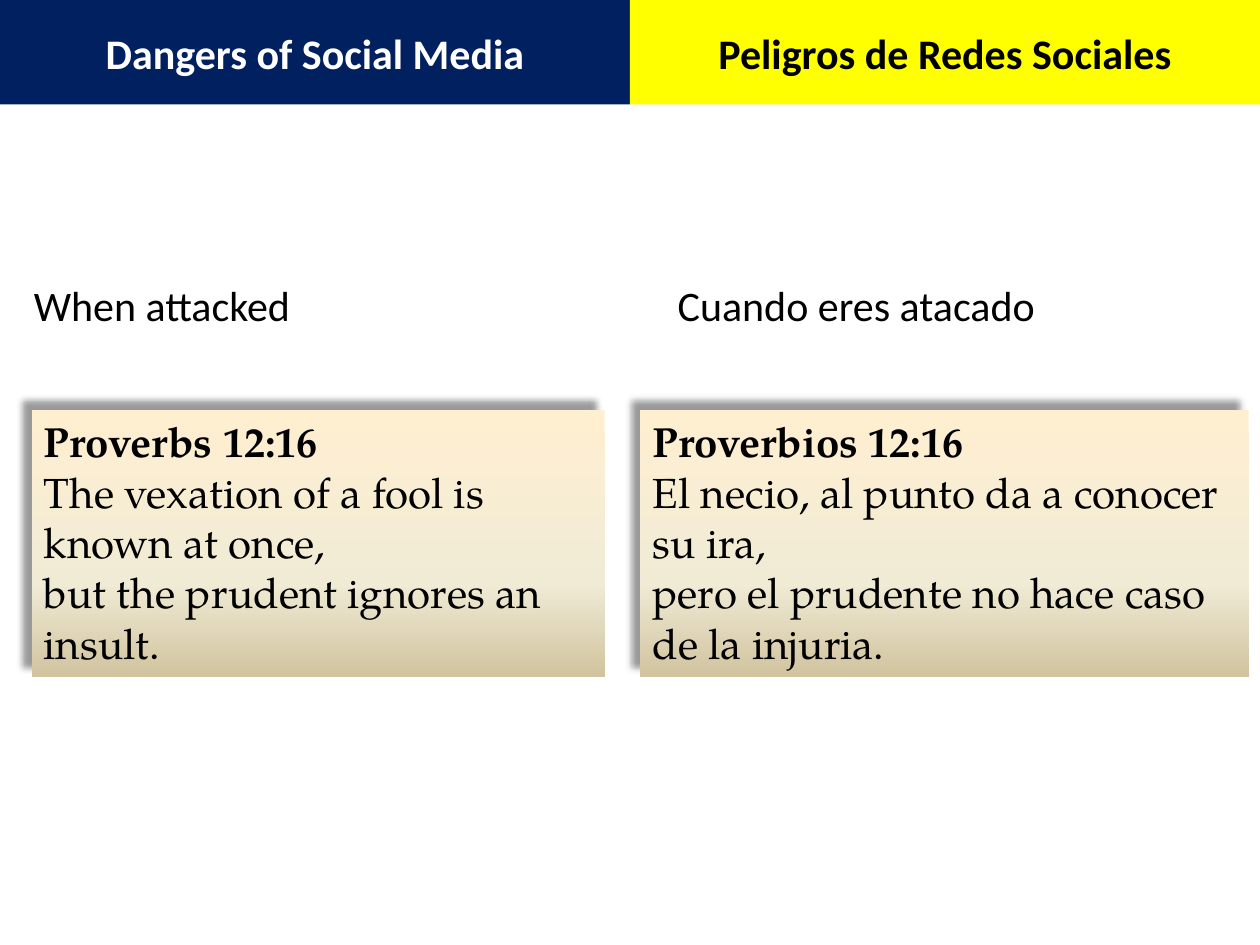
from copy import deepcopy
from dataclasses import dataclass

from lxml import etree
from pptx import Presentation
from pptx.dml.color import RGBColor
from pptx.enum import shapes, text
from pptx.oxml import ns
from pptx.util import Inches, Pt

NAVY = RGBColor(0x00, 0x20, 0x60)
YELLOW = RGBColor(0xFF, 0xFF, 0x00)
WHITE = RGBColor(0xFF, 0xFF, 0xFF)
BLACK = RGBColor(0x00, 0x00, 0x00)
PARCHMENT = (
    (0, RGBColor(0xFF, 0xEF, 0xD1)),
    (0.65, RGBColor(0xF0, 0xEB, 0xD5)),
    (1, RGBColor(0xD1, 0xC3, 0x9F)),
)
SANS, SERIF = "Calibri", "TeX Gyre Pagella"


@dataclass
class Column:
    """One language half of the slide."""
    left: float
    title: str
    title_fill: RGBColor
    title_color: RGBColor
    topic: str
    topic_left: float
    topic_width: float
    reference: str
    verse: tuple[str, ...]
    card_left: float
    card_width: float


COLUMNS = (
    Column(0, "Dangers of Social Media", NAVY, WHITE,
           "When attacked", 0.17, 3.83,
           "Proverbs 12:16",
           ("The vexation of a fool is known at once,",
            "but the prudent ignores an insult."), 0.25, 4.55),
    Column(5, "Peligros de Redes Sociales", YELLOW, BLACK,
           "Cuando eres atacado", 5.28, 4.13,
           "Proverbios 12:16",
           ("El necio, al punto da a conocer su ira,",
            "pero el prudente no hace caso de la injuria."), 5.08, 4.83),
)


def write(p, *lines: str, font: str = SANS, color: RGBColor = BLACK,
          bold: bool = False, align=text.PP_ALIGN.LEFT) -> None:
    """Fill a paragraph with lines parted by line breaks."""
    p.alignment = align
    for i, line in enumerate(lines):
        if i:
            p.add_line_break()
        r = p.add_run()
        r.text = line
        r.font.name, r.font.size, r.font.bold = font, Pt(24), bold
        r.font.color.rgb = color


def add_rect(s, left: float, top: float, width: float, height: float):
    sp = s.shapes.add_shape(shapes.MSO_SHAPE.RECTANGLE, Inches(left),
                            Inches(top), Inches(width), Inches(height))
    sp.line.fill.background()
    sp.shadow.inherit = False
    sp.text_frame.word_wrap = True
    return sp


def fill_parchment(sp) -> None:
    """Three-stop gradient running from top to bottom."""
    sp.fill.gradient()
    sp.fill.gradient_angle = 270
    stops = sp._element.spPr.find(".//" + ns.qn("a:gsLst"))
    stops.append(deepcopy(stops[-1]))
    for stop, (position, color) in zip(sp.fill.gradient_stops, PARCHMENT):
        stop.position = position
        stop.color.rgb = color


def cast_shadow(sp) -> None:
    """Soft shadow towards the upper left."""
    effects = sp._element.spPr.find(ns.qn("a:effectLst"))
    shadow = etree.SubElement(effects, ns.qn("a:outerShdw"),
                              blurRad=str(Pt(4)), dist=str(Pt(7)),
                              dir=str(225 * 60000), algn="br", rotWithShape="0")
    tint = etree.SubElement(shadow, ns.qn("a:srgbClr"), val=str(BLACK))
    etree.SubElement(tint, ns.qn("a:alpha"), val="40000")


def add_title(s, col: Column) -> None:
    sp = add_rect(s, col.left, 0, 5, 0.83)
    sp.fill.solid()
    sp.fill.fore_color.rgb = col.title_fill
    sp.text_frame.vertical_anchor = text.MSO_ANCHOR.MIDDLE
    write(sp.text_frame.paragraphs[0], col.title, color=col.title_color,
          bold=True, align=text.PP_ALIGN.CENTER)


def add_topic(s, col: Column) -> None:
    sp = s.shapes.add_textbox(Inches(col.topic_left), Inches(2.17),
                              Inches(col.topic_width), Inches(0.5))
    tf = sp.text_frame
    tf.word_wrap = True
    tf.auto_size = text.MSO_AUTO_SIZE.SHAPE_TO_FIT_TEXT
    write(tf.paragraphs[0], col.topic)


def add_verse_card(s, col: Column) -> None:
    sp = add_rect(s, col.card_left, 3.25, col.card_width, 2.12)
    fill_parchment(sp)
    cast_shadow(sp)
    tf = sp.text_frame
    tf.vertical_anchor = text.MSO_ANCHOR.TOP
    tf.auto_size = text.MSO_AUTO_SIZE.SHAPE_TO_FIT_TEXT
    write(tf.paragraphs[0], col.reference, font=SERIF, bold=True)
    write(tf.add_paragraph(), *col.verse, font=SERIF)


def main() -> None:
    prs = Presentation()
    prs.slide_width, prs.slide_height = Inches(10), Inches(7.5)
    s = prs.slides.add_slide(prs.slide_layouts[6])
    for col in COLUMNS:
        add_title(s, col)
        add_topic(s, col)
        add_verse_card(s, col)
    prs.save("out.pptx")


if __name__ == "__main__":
    main()
